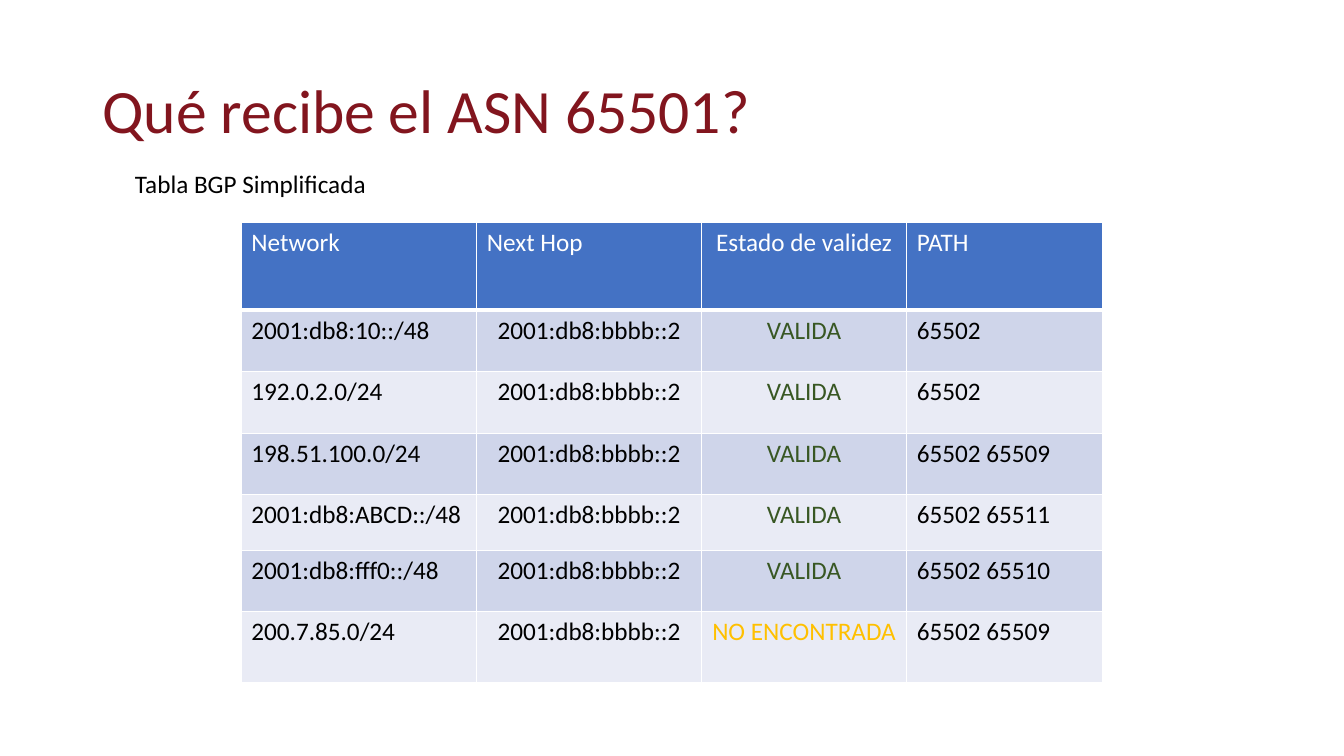
"""Build the slide on the BGP routes received by ASN 65501."""
from lxml import etree
from pptx import Presentation
from pptx.dml.color import RGBColor
from pptx.enum.text import MSO_ANCHOR, PP_ALIGN
from pptx.oxml.ns import qn
from pptx.util import Pt

LEFT, CENTER = PP_ALIGN.LEFT, PP_ALIGN.CENTER
MIDDLE = MSO_ANCHOR.MIDDLE

TITLE = "Qué recibe el ASN 65501?"
LABEL = "Tabla BGP Simplificada"
HEADS = ("Network", "Next Hop", "Estado de validez", "PATH")
HOP = "2001:db8:bbbb::2"
VALID, UNKNOWN = "VALIDA", "NO ENCONTRADA"
ROUTES = [
    ("2001:db8:10::/48", HOP, VALID, "65502"),
    ("192.0.2.0/24", HOP, VALID, "65502"),
    ("198.51.100.0/24", HOP, VALID, "65502 65509"),
    ("2001:db8:ABCD::/48", HOP, VALID, "65502 65511"),
    ("2001:db8:fff0::/48", HOP, VALID, "65502 65510"),
    ("200.7.85.0/24", HOP, UNKNOWN, "65502 65509"),
]

THEME = {
    "font": "Calibri", "title_size": 44, "text_size": 18,
    "title": "82151E", "text": "000000", "line": "FFFFFF",
    "head": "4472C4", "head_text": "FFFFFF", "bands": ("CFD5EA", "E9EBF5"),
    "states": {VALID: "385723", UNKNOWN: "FFC000"},
}

SLIDE = (960, 540)
TITLE_BOX = (66, 28.8, 828, 104.4)
LABEL_BOX = (89.3, 116.6, 181.4, 28.8)
TABLE_AT = (172.4, 159)
WIDTHS = (168.2, 160.4, 146.8, 140.2)
HEIGHTS = (62.5, 44, 44, 44, 39.6, 44, 50.5)
HEAD_ALIGN = (LEFT, LEFT, CENTER, LEFT)
BODY_ALIGN = (LEFT, CENTER, CENTER, LEFT)


def points(box):
    """Turn plain numbers into point lengths."""
    return [Pt(value) for value in box]


def write(frame, text, size, color, align=LEFT):
    """Put one styled run in the first paragraph and return it."""
    para = frame.paragraphs[0]
    para.alignment = align
    run = para.add_run()
    run.text = text
    run.font.name = THEME["font"]
    run.font.size = Pt(size)
    run.font.color.rgb = RGBColor.from_string(color)
    return para


def border(cell, base):
    """Draw the four cell edges, with the given width at the base."""
    props = cell._tc.get_or_add_tcPr()
    for side, width in (("L", 1), ("R", 1), ("T", 1), ("B", base)):
        edge = etree.SubElement(props, qn("a:ln" + side), w=str(Pt(width)))
        fill = etree.SubElement(edge, qn("a:solidFill"))
        etree.SubElement(fill, qn("a:srgbClr"), val=THEME["line"])


def add_title(slide):
    """Place the title in its placeholder."""
    title = slide.shapes.title
    title.left, title.top, title.width, title.height = points(TITLE_BOX)
    frame = title.text_frame
    frame.vertical_anchor = MIDDLE
    para = write(frame, TITLE, THEME["title_size"], THEME["title"])
    para.line_spacing = 0.9


def add_label(slide):
    """Place the caption above the table."""
    frame = slide.shapes.add_textbox(*points(LABEL_BOX)).text_frame
    frame.word_wrap = False
    write(frame, LABEL, THEME["text_size"], THEME["text"])


def add_routes(slide):
    """Build the table of routes."""
    rows = [HEADS] + ROUTES
    box = points((*TABLE_AT, sum(WIDTHS), sum(HEIGHTS)))
    table = slide.shapes.add_table(len(rows), len(HEADS), *box).table
    for col, width in zip(table.columns, WIDTHS):
        col.width = Pt(width)
    for num, (row, height) in enumerate(zip(rows, HEIGHTS)):
        table.rows[num].height = Pt(height)
        head = num == 0
        band = THEME["head"] if head else THEME["bands"][(num - 1) % 2]
        ink = THEME["head_text"] if head else THEME["text"]
        aligns = HEAD_ALIGN if head else BODY_ALIGN
        for col, (text, align) in enumerate(zip(row, aligns)):
            cell = table.cell(num, col)
            border(cell, 3 if head else 1)
            cell.fill.solid()
            cell.fill.fore_color.rgb = RGBColor.from_string(band)
            color = THEME["states"].get(text, ink)
            para = write(cell.text_frame, text, THEME["text_size"], color, align)
            para.runs[0].font.bold = False


def main():
    """Make the deck and save it."""
    deck = Presentation()
    deck.slide_width, deck.slide_height = points(SLIDE)
    slide = deck.slides.add_slide(deck.slide_layouts[5])
    add_title(slide)
    add_routes(slide)
    add_label(slide)
    deck.save("out.pptx")


if __name__ == "__main__":
    main()
